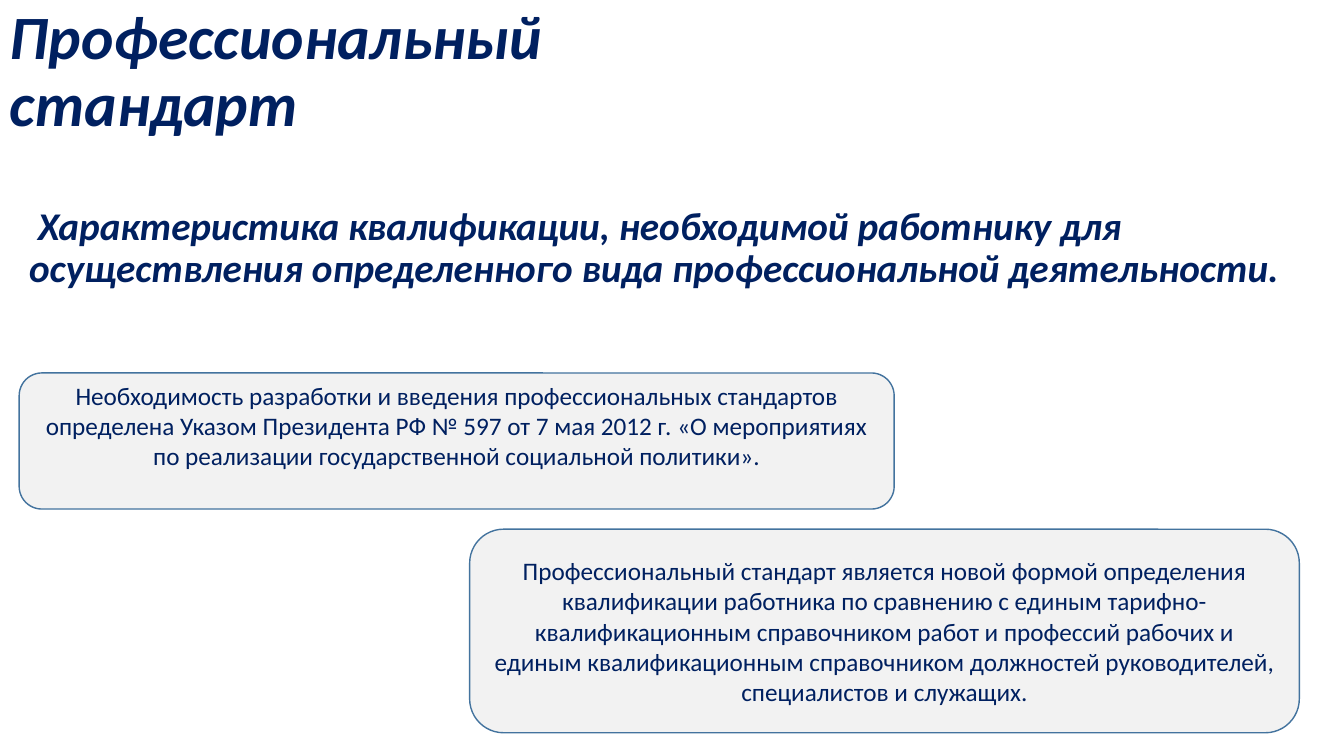
from dataclasses import dataclass

import pptx
import pptx.dml.color
import pptx.enum.shapes
import pptx.enum.text
import pptx.util

Pt = pptx.util.Pt
RGBColor = pptx.dml.color.RGBColor
ANCHOR = pptx.enum.text.MSO_ANCHOR
ALIGN = pptx.enum.text.PP_ALIGN


@dataclass(frozen=True)
class Theme:
    font: str = "Calibri"
    ink: RGBColor = RGBColor(0x00, 0x20, 0x60)
    card_fill: RGBColor = RGBColor(0xF2, 0xF2, 0xF2)
    card_line: RGBColor = RGBColor(0x43, 0x73, 0x9E)
    title_size: int = 44
    definition_size: int = 28
    card_size: int = 18


theme = Theme()


def write(shape, text, size, anchor, emphasis=False):
    """Fill a shape with one wrapped paragraph and return that paragraph."""
    frame = shape.text_frame
    frame.word_wrap = True
    frame.vertical_anchor = anchor
    para = frame.paragraphs[0]
    para.text = text
    para.font.name = theme.font
    para.font.size = Pt(size)
    para.font.bold = para.font.italic = emphasis
    para.font.color.rgb = theme.ink
    return para


deck = pptx.Presentation()
deck.slide_width, deck.slide_height = Pt(960), Pt(540)
page = deck.slides.add_slide(deck.slide_layouts[6])

# Title and definition
title = page.shapes.add_textbox(Pt(0), Pt(0), Pt(568.8), Pt(104.4))
para = write(title, "Профессиональный стандарт", theme.title_size, ANCHOR.MIDDLE, emphasis=True)
para.line_spacing = 0.9

definition = page.shapes.add_textbox(Pt(13.7), Pt(144), Pt(914.4), Pt(108))
para = write(
    definition,
    "Характеристика квалификации, необходимой работнику для осуществления "
    "определенного вида профессиональной деятельности.",
    theme.definition_size, ANCHOR.TOP, emphasis=True,
)
para.line_spacing = 0.9
para._p.get_or_add_pPr().set("indent", str(Pt(6.3)))

# Cards: left, top, width, height, bottom inset, text
cards = [
    (13.7, 266.4, 625, 97.2, 25.6,
     "Необходимость разработки и введения профессиональных стандартов "
     "определена Указом Президента РФ № 597 от 7 мая 2012 г. «О мероприятиях "
     "по реализации государственной социальной политики»."),
    (335.5, 378, 592.6, 145.4, 3.6,
     "Профессиональный стандарт является новой формой определения "
     "квалификации работника по сравнению с единым "
     "тарифно-квалификационным справочником работ и профессий рабочих и "
     "единым квалификационным справочником должностей руководителей, "
     "специалистов и служащих."),
]
for left, top, width, height, bottom_inset, text in cards:
    card = page.shapes.add_shape(
        pptx.enum.shapes.MSO_SHAPE.ROUNDED_RECTANGLE,
        Pt(left), Pt(top), Pt(width), Pt(height),
    )
    card.shadow.inherit = False
    card.fill.solid()
    card.fill.fore_color.rgb = theme.card_fill
    card.line.color.rgb = theme.card_line
    card.line.width = Pt(1)
    card.text_frame.margin_bottom = Pt(bottom_inset)
    write(card, text, theme.card_size, ANCHOR.MIDDLE).alignment = ALIGN.CENTER

deck.save("out.pptx")
